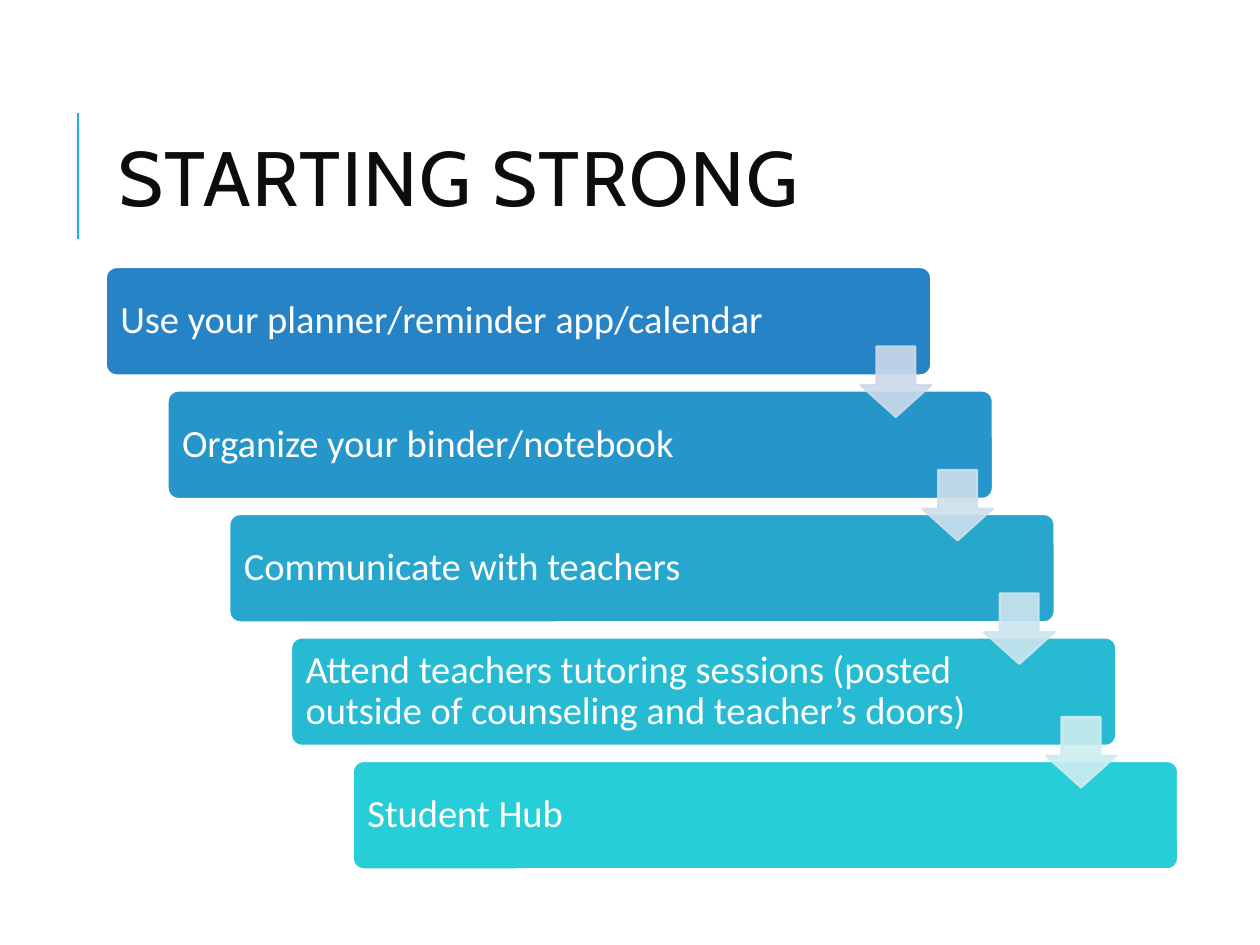
from lxml.etree import SubElement
from pptx import Presentation
from pptx.dml.color import RGBColor
from pptx.enum.shapes import MSO_CONNECTOR, MSO_SHAPE
from pptx.enum.text import MSO_ANCHOR, PP_ALIGN
from pptx.oxml.ns import qn
from pptx.util import Inches, Pt

WHITE = RGBColor(0xFF, 0xFF, 0xFF)
INK = RGBColor(0x0D, 0x0D, 0x0D)
ACCENT = RGBColor(0x1C, 0xAD, 0xE4)

STEPS = [
    ("Use your planner/reminder app/calendar", RGBColor(0x26, 0x83, 0xC6)),
    ("Organize your binder/notebook", RGBColor(0x26, 0x95, 0xCA)),
    ("Communicate with teachers", RGBColor(0x27, 0xA7, 0xCE)),
    ("Attend teachers tutoring sessions (posted outside of counseling "
     "and teacher’s doors)", RGBColor(0x27, 0xBA, 0xD3)),
    ("Student Hub", RGBColor(0x27, 0xCE, 0xD7)),
]
ARROW_COLORS = [
    RGBColor(0xCD, 0xD9, 0xEA),
    RGBColor(0xCD, 0xDF, 0xEC),
    RGBColor(0xCD, 0xE5, 0xEE),
    RGBColor(0xCD, 0xED, 0xF0),
]

TITLE_FONT = {"name": "Cabin", "size": Pt(44)}
STEP_FONT = {"name": "Calibri", "size": Pt(22)}
TITLE_FRAME = {"word_wrap": True, "vertical_anchor": MSO_ANCHOR.MIDDLE}
STEP_FRAME = {
    **TITLE_FRAME,
    "margin_left": Inches(0.09),
    "margin_top": Inches(0.09),
    "margin_right": Inches(1.14),
    "margin_bottom": Inches(0.09),
}


def set_attrs(obj, values):
    for name, value in values.items():
        setattr(obj, name, value)


def write(tf, text, frame, font, color, spacing):
    set_attrs(tf, frame)
    p = tf.paragraphs[0]
    set_attrs(p, {"alignment": PP_ALIGN.LEFT, "line_spacing": spacing})
    r = p.add_run()
    r.text = text
    set_attrs(r.font, font)
    r.font.color.rgb = color
    return r


def add_block(s, kind, box, adjustments, fill, line):
    sp = s.shapes.add_shape(kind, *map(Inches, box))
    sp.shadow.inherit = False
    for i, value in enumerate(adjustments):
        sp.adjustments[i] = value
    sp.fill.solid()
    sp.fill.fore_color.rgb = fill
    sp.line.color.rgb = line
    sp.line.width = Pt(1.25)
    return sp


def add_title(s, left, top, width, height):
    rule = s.shapes.add_connector(
        MSO_CONNECTOR.STRAIGHT,
        Inches(left - 0.22), Inches(top + 1.26),
        Inches(left - 0.22), Inches(top + 0.26))
    rule.line.color.rgb = ACCENT
    rule.line.width = Pt(1.5)
    SubElement(rule._element.spPr, qn("a:effectLst"))
    sp = s.shapes.add_textbox(*map(Inches, (left, top, width, height)))
    r = write(sp.text_frame, "STARTING STRONG", TITLE_FRAME, TITLE_FONT, INK, 0.8)
    r.font._element.set("spc", "100")


def add_staircase(s, left, top, width, height):
    step_w, step_h, arrow = 6.55, 0.86, 0.56
    dx = (width - step_w) / (len(STEPS) - 1)
    dy = (height - step_h) / (len(STEPS) - 1)
    for i, (text, color) in enumerate(STEPS):
        box = (left + i * dx, top + i * dy, step_w, step_h)
        sp = add_block(s, MSO_SHAPE.ROUNDED_RECTANGLE, box, [0.1], color, WHITE)
        write(sp.text_frame, text, STEP_FRAME, STEP_FONT, WHITE, 0.9)
    for i, color in enumerate(ARROW_COLORS):
        box = (left + i * dx + step_w - arrow, top + i * dy + 0.63, arrow, arrow)
        sp = add_block(s, MSO_SHAPE.DOWN_ARROW, box, [0.55, 0.45], color, color)
        for clr in sp._element.spPr.iter(qn("a:srgbClr")):
            SubElement(clr, qn("a:alpha"), val="90000")


def main():
    prs = Presentation()
    prs.slide_width, prs.slide_height = Inches(10), Inches(7.5)
    s = prs.slides.add_slide(prs.slide_layouts[6])
    add_title(s, 0.84, 0.64, 7.97, 1.64)
    add_staircase(s, 0.84, 2.12, 8.51, 4.78)
    prs.save("out.pptx")


if __name__ == "__main__":
    main()
